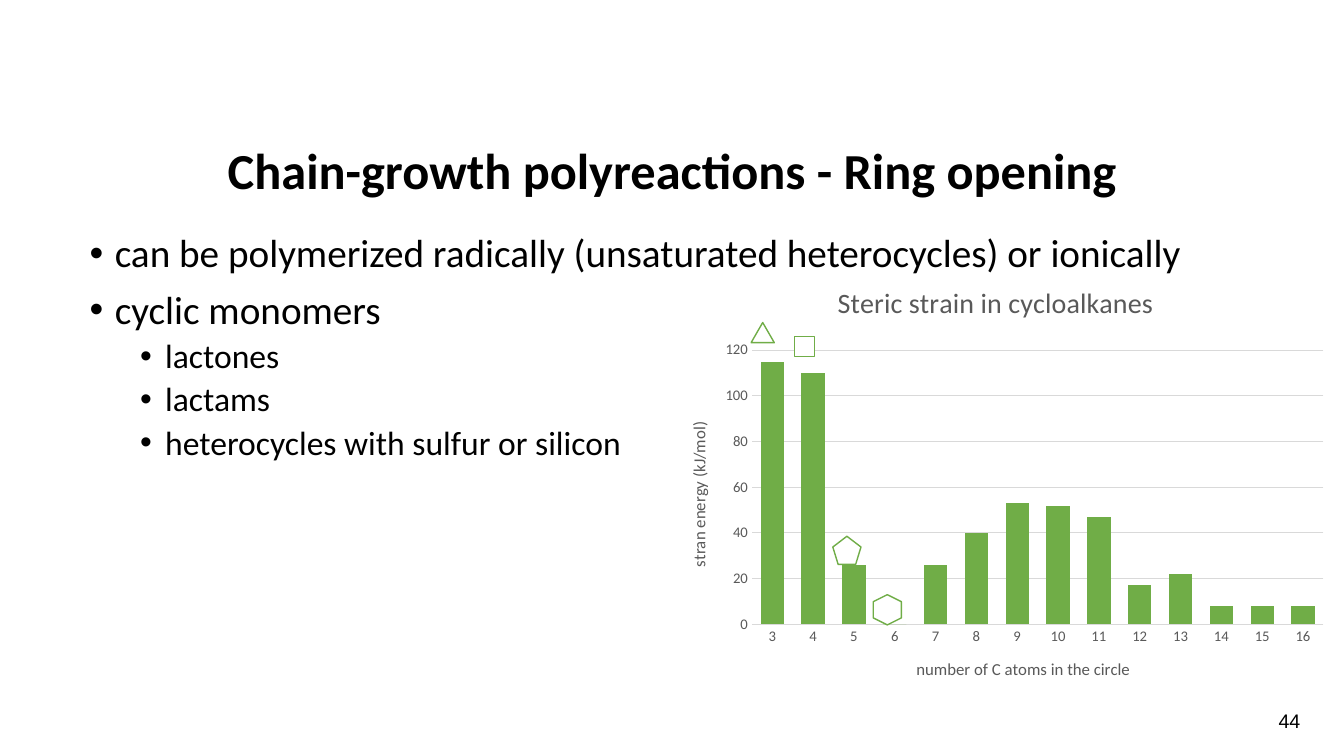
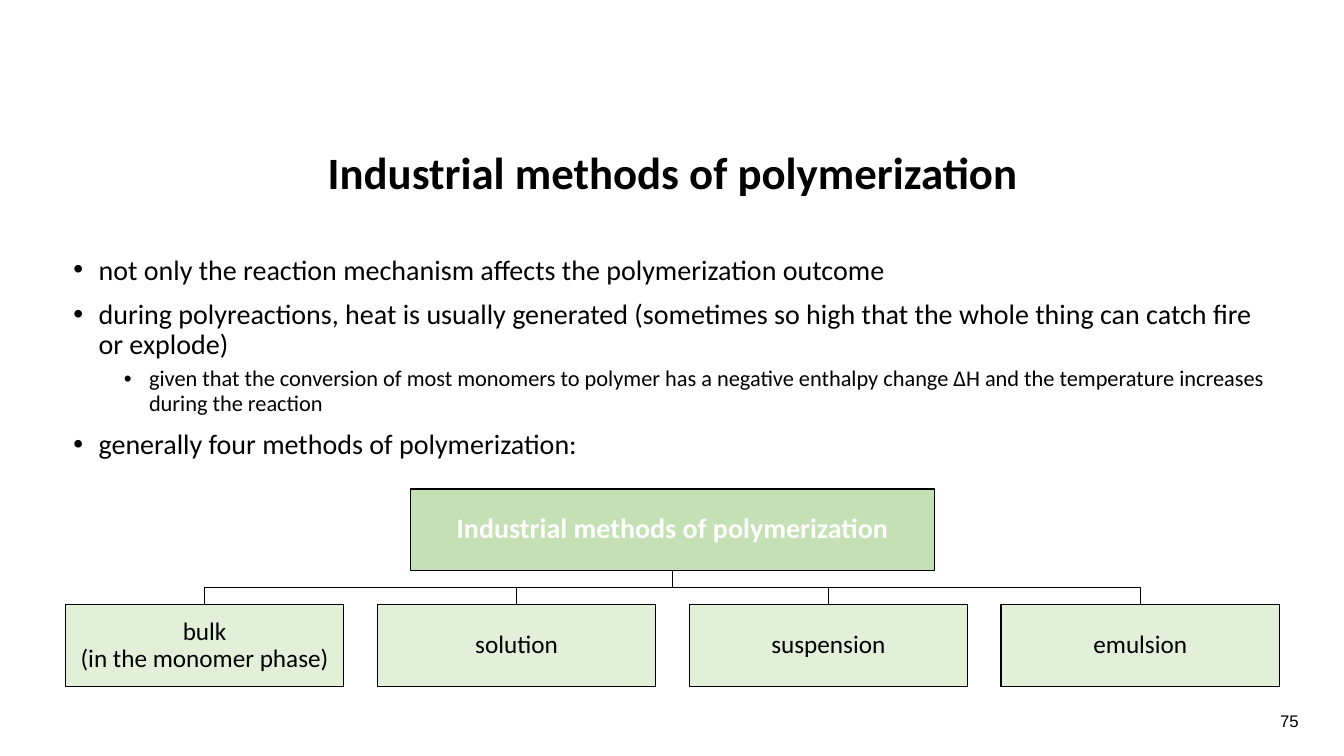
import pptx
import pptx.chart.data
import pptx.dml.color
import pptx.enum.chart
import pptx.enum.shapes
import pptx.enum.text
import pptx.oxml
import pptx.oxml.ns
import pptx.util

Inches = pptx.util.Inches
Pt = pptx.util.Pt
RGBColor = pptx.dml.color.RGBColor
Shape = pptx.enum.shapes.MSO_SHAPE
Anchor = pptx.enum.text.MSO_ANCHOR
Align = pptx.enum.text.PP_ALIGN
qn = pptx.oxml.ns.qn

# Shared style
BLACK = RGBColor(0x00, 0x00, 0x00)
WHITE = RGBColor(0xFF, 0xFF, 0xFF)
GREEN = RGBColor(0x70, 0xAD, 0x47)
MID_GREEN = RGBColor(0xC5, 0xE0, 0xB4)
PALE_GREEN = RGBColor(0xE2, 0xF0, 0xD9)
GREY = RGBColor(0x59, 0x59, 0x59)
LIGHT_GREY = RGBColor(0xD9, 0xD9, 0xD9)
BODY_FONT = "Calibri"
NUMBER_FONT = "Arial"
LINE_SPACING = 0.9
LEVEL_STEP = 0.5
HANG = 0.25


def inches(values):
    return [Inches(value) for value in values]


def style_font(font, size, color=BLACK, bold=False, name=BODY_FONT):
    font.name = name
    font.size = Pt(size)
    font.bold = bold
    font.color.rgb = color


def style_runs(paragraph, size, **style):
    for run in paragraph.runs:
        style_font(run.font, size, **style)


def set_centered_text(text_frame, text, size, anchor, **style):
    text_frame.word_wrap = True
    text_frame.vertical_anchor = anchor
    text_frame.text = text
    paragraph = text_frame.paragraphs[0]
    paragraph.alignment = Align.CENTER
    paragraph.line_spacing = LINE_SPACING
    style_runs(paragraph, size, **style)


def add_title(slide, box, text, size, anchor):
    text_frame = slide.shapes.add_textbox(*inches(box)).text_frame
    set_centered_text(text_frame, text, size, anchor, bold=True)


def add_slide_number(slide, number, size):
    text_frame = slide.shapes.add_textbox(*inches((12.51, 6.95, 0.56, 0.4))).text_frame
    set_centered_text(text_frame, number, size, Anchor.MIDDLE, name=NUMBER_FONT)
    text_frame.paragraphs[0].line_spacing = 1.0


def add_bullets(slide, box, items, sizes, margin):
    """Add (level, text) items; sizes holds one text size per level."""
    text_frame = slide.shapes.add_textbox(*inches(box)).text_frame
    text_frame.word_wrap = True
    for index, (level, text) in enumerate(items):
        paragraph = text_frame.add_paragraph() if index else text_frame.paragraphs[0]
        paragraph.text = text
        paragraph.level = level
        properties = paragraph._p.get_or_add_pPr()
        properties.set("marL", str(Inches(margin + level * LEVEL_STEP)))
        properties.set("indent", str(Inches(-HANG)))
        bullet_font = properties.makeelement(qn("a:buFont"), {"typeface": "Arial"})
        bullet = properties.makeelement(qn("a:buChar"), {"char": "•"})
        properties.extend([bullet_font, bullet])
        paragraph.line_spacing = LINE_SPACING
        if index:
            paragraph.space_before = Pt(5 if level else 10)
        style_runs(paragraph, sizes[level])


def set_outline(shape, color):
    shape.shadow.inherit = False
    shape.line.color.rgb = color
    shape.line.width = Pt(1)


def add_outlined_shape(slide, kind, box, fill, line):
    shape = slide.shapes.add_shape(kind, *inches(box))
    set_outline(shape, line)
    shape.fill.solid()
    shape.fill.fore_color.rgb = fill
    return shape


def add_label_box(slide, box, text, fill, size, **style):
    shape = add_outlined_shape(slide, Shape.RECTANGLE, box, fill, BLACK)
    text_frame = shape.text_frame
    text_frame.margin_left = text_frame.margin_right = Inches(0.01)
    text_frame.margin_top = text_frame.margin_bottom = Inches(0.01)
    set_centered_text(text_frame, text, size, Anchor.MIDDLE, **style)


def add_branch(slide, start_x, start_y, end_x, end_y):
    """Draw an open line that goes down, across and down again."""
    middle = (start_y + end_y) / 2
    builder = slide.shapes.build_freeform(Inches(start_x), Inches(start_y))
    bends = [(start_x, middle), (end_x, middle), (end_x, end_y)]
    builder.add_line_segments([inches(point) for point in bends], close=False)
    branch = builder.convert_to_shape()
    set_outline(branch, BLACK)
    branch.fill.background()


def make_layout(**values):
    """Build a manual chart layout from fractions of the chart's size."""
    entries = "".join(f'<c:{key} val="{value}"/>' for key, value in values.items())
    return pptx.oxml.parse_xml(
        f'<c:layout {pptx.oxml.ns.nsdecls("c")}><c:manualLayout>{entries}'
        "</c:manualLayout></c:layout>")


def replace_layout(parent, layout, position):
    for existing in parent.findall(qn("c:layout")):
        parent.remove(existing)
    parent.insert(position, layout)


def set_chart_title(title, text, size, x, y):
    title.text_frame.text = text
    style_runs(title.text_frame.paragraphs[0], size, color=GREY)
    layout = make_layout(xMode="edge", yMode="edge", x=x, y=y)
    replace_layout(title._element, layout, 1)


def style_axis(axis):
    axis.major_tick_mark = axis.minor_tick_mark = pptx.enum.chart.XL_TICK_MARK.NONE
    style_font(axis.tick_labels.font, 10.5, GREY)


def add_strain_chart(slide, box):
    data = pptx.chart.data.CategoryChartData()
    data.categories = [str(size) for size in range(3, 17)]
    data.add_series("Series 1", (115, 110, 26, 0, 26, 40, 53, 52, 47, 17, 22, 8, 8, 8))
    kind = pptx.enum.chart.XL_CHART_TYPE.COLUMN_CLUSTERED
    chart = slide.shapes.add_chart(kind, *inches(box), data).chart
    style_font(chart.font, 10)
    chart.has_legend = False

    # Columns
    plot = chart.plots[0]
    plot.gap_width = 75
    plot.vary_by_categories = False
    plot.series[0].format.fill.solid()
    plot.series[0].format.fill.fore_color.rgb = GREEN

    # Axes
    categories, values = chart.category_axis, chart.value_axis
    style_axis(categories)
    style_axis(values)
    categories.has_major_gridlines = False
    values.has_major_gridlines = True
    for line in (categories.format.line, values.major_gridlines.format.line):
        line.color.rgb = LIGHT_GREY
        line.width = Pt(0.75)
    values.format.line.fill.background()
    values.minimum_scale, values.maximum_scale, values.major_unit = 0, 120, 20

    # Titles and plot position
    chart.has_title = True
    set_chart_title(chart.chart_title, "Steric strain in cycloalkanes", 20, 0.25, 0.01)
    set_chart_title(categories.axis_title, "number of C atoms in the circle", 12, 0.37, 0.89)
    set_chart_title(values.axis_title, "stran energy (kJ/mol)", 12, 0.03, 0.34)
    body = values.axis_title._element.find(".//" + qn("a:bodyPr"))
    body.set("rot", "-5400000")
    body.set("vert", "horz")
    layout = make_layout(layoutTarget="inner", xMode="edge", yMode="edge",
                         x=0.13, y=0.18, w=0.85, h=0.64)
    replace_layout(plot._element.getparent(), layout, 0)


def add_method_tree(slide, root_text, methods):
    left, right, width, height = 0.65, 12.69, 2.76, 0.81
    center, root_top, root_width, top = 6.67, 4.85, 5.2, 6
    pitch = (right - left - width) / (len(methods) - 1)
    columns = [left + index * pitch for index in range(len(methods))]

    for x in reversed(columns):
        add_branch(slide, center, root_top + height, x + width / 2, top)
    add_label_box(slide, (center - root_width / 2, root_top, root_width, height),
                  root_text, MID_GREEN, 20, color=WHITE, bold=True)
    for x, method in zip(columns, methods):
        add_label_box(slide, (x, top, width, height), method, PALE_GREEN, 18)


def build_ring_opening(slide):
    add_slide_number(slide, "44", 14)
    add_title(slide, (0.92, 0.99, 11.5, 1.45),
              "Chain-growth polyreactions - Ring opening", 36, Anchor.MIDDLE)
    add_bullets(slide, (0.79, 2.27, 11.71, 4.88), [
        (0, "can be polymerized radically (unsaturated heterocycles) or ionically"),
        (0, "cyclic monomers"),
        (1, "lactones"),
        (1, "lactams"),
        (1, "heterocycles with sulfur or silicon"),
    ], (28, 24), 0.25)
    add_strain_chart(slide, (6.59, 2.71, 6.67, 4.25))

    # Ring symbols above the first columns
    for kind, box, rotation in (
        (Shape.ISOSCELES_TRIANGLE, (7.45, 3.2, 0.23, 0.2), 0),
        (Shape.RECTANGLE, (7.88, 3.34, 0.2, 0.2), 0),
        (Shape.REGULAR_PENTAGON, (8.26, 5.32, 0.28, 0.28), 0),
        (Shape.HEXAGON, (8.65, 5.91, 0.3, 0.28), 90),
    ):
        add_outlined_shape(slide, kind, box, WHITE, GREEN).rotation = rotation


def build_industrial_methods(slide):
    title = "Industrial methods of polymerization"
    add_bullets(slide, (0.6, 2.49, 12.13, 4.57), [
        (0, "not only the reaction mechanism affects the polymerization outcome"),
        (0, "during polyreactions, heat is usually generated (sometimes so high "
            "that the whole thing can catch fire or explode)"),
        (1, "given that the conversion of most monomers to polymer has a negative "
            "enthalpy change ΔH and the temperature increases during the reaction"),
        (0, "generally four methods of polymerization:"),
    ], (20, 16), 0.28)
    add_slide_number(slide, "75", 12)
    add_title(slide, (0.61, 1.45, 12.13, 0.94), title, 32, Anchor.TOP)
    add_method_tree(slide, title, (
        "bulk\v(in the monomer phase)", "solution", "suspension", "emulsion"))


def main():
    presentation = pptx.Presentation()
    presentation.slide_width = Inches(13.33)
    presentation.slide_height = Inches(7.5)
    blank = presentation.slide_layouts[6]
    for build in (build_ring_opening, build_industrial_methods):
        build(presentation.slides.add_slide(blank))
    presentation.save("out.pptx")


if __name__ == "__main__":
    main()
